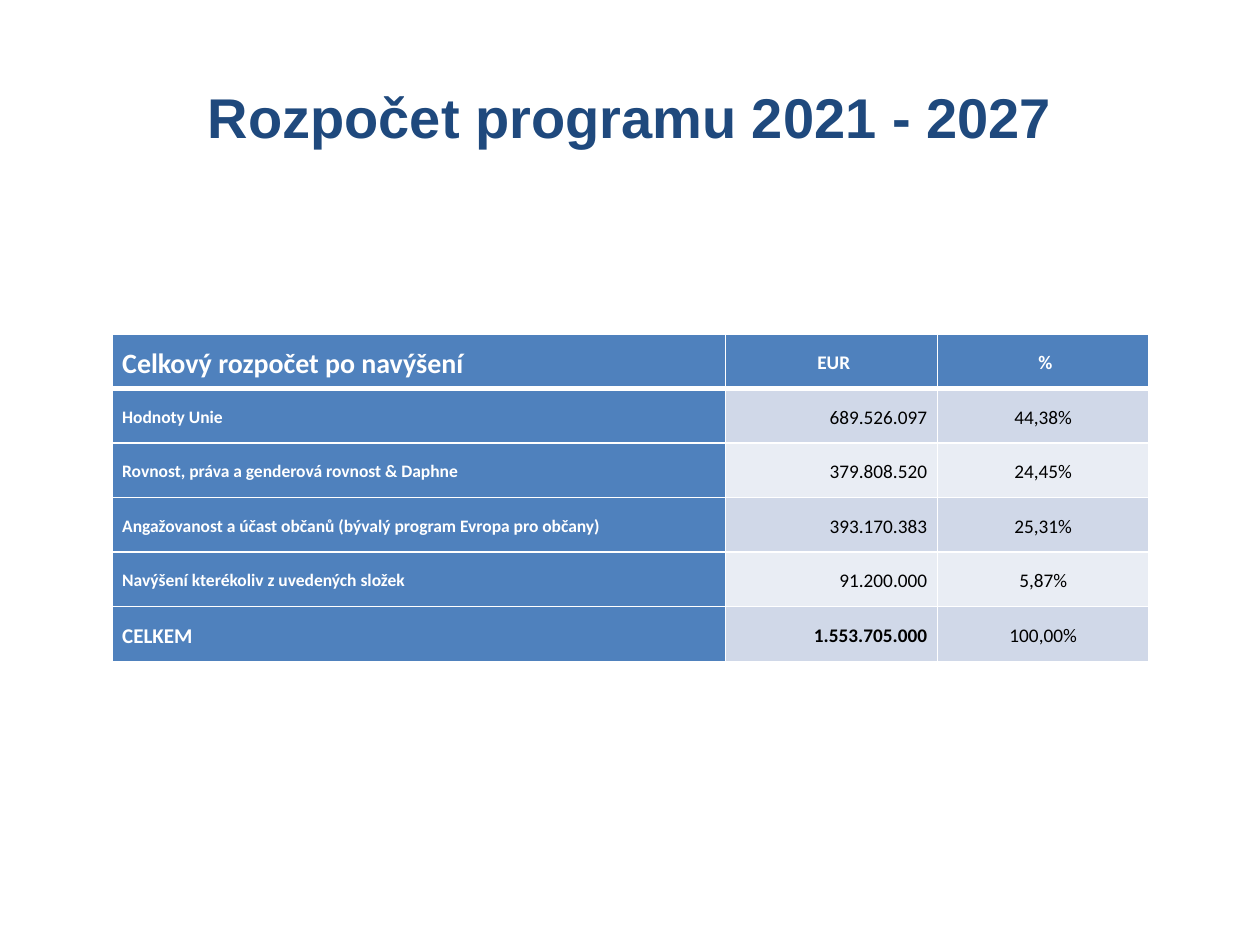
from lxml.etree import SubElement
from pptx import Presentation
from pptx.dml.color import RGBColor
from pptx.enum.text import MSO_ANCHOR, PP_ALIGN
from pptx.oxml.ns import qn
from pptx.util import Inches, Pt

NAVY = RGBColor(0x1F, 0x49, 0x7D)
BLUE = RGBColor(0x4F, 0x81, 0xBD)
BAND_DARK = RGBColor(0xD0, 0xD8, 0xE8)
BAND_LIGHT = RGBColor(0xE9, 0xED, 0xF4)
WHITE = RGBColor(0xFF, 0xFF, 0xFF)
BLACK = RGBColor(0x00, 0x00, 0x00)

COLUMN_WIDTHS = (4.87, 1.68, 1.68)
HEADER = ("Celkový rozpočet po navýšení", " EUR", " %")
BUDGET = (
    ("Hodnoty Unie", "689.526.097", "44,38%"),
    ("Rovnost, práva a genderová rovnost & Daphne", "379.808.520", "24,45%"),
    ("Angažovanost a účast občanů (bývalý program Evropa pro občany)", "393.170.383", "25,31%"),
    ("Navýšení kterékoliv z uvedených složek", "91.200.000", "5,87%"),
    ("CELKEM", "1.553.705.000", "100,00%"),
)


class BudgetSlide:
    """Holds the slide and draws its title and budget table in one style."""

    def __init__(self, deck):
        self.slide = deck.slides.add_slide(deck.slide_layouts[5])
        self.cell_format = {
            "margin_left": Inches(0.08),
            "margin_right": Inches(0.08),
            "margin_top": 0,
            "margin_bottom": 0,
            "vertical_anchor": MSO_ANCHOR.MIDDLE,
        }
        self.paragraph_format = {"line_spacing": 1.15, "space_after": Pt(10)}

    def apply(self, target, values):
        for name, value in values.items():
            setattr(target, name, value)

    def add_text(self, para, text, color, size, bold, font="Calibri"):
        span = para.add_run()
        span.text = text
        self.apply(span.font, {"name": font, "size": Pt(size), "bold": bold})
        span.font.color.rgb = color

    def title(self, text):
        box = self.slide.shapes.title
        self.apply(box, {"left": Inches(0.5), "top": Inches(0.3),
                         "width": Inches(9), "height": Inches(1.25)})
        box.text_frame.vertical_anchor = MSO_ANCHOR.MIDDLE
        para = box.text_frame.paragraphs[0]
        para.alignment = PP_ALIGN.CENTER
        self.add_text(para, text, NAVY, 32, True, "Arial")

    def border(self, cell, bottom, top):
        properties = cell._tc.get_or_add_tcPr()
        for side, width in {"L": 1, "R": 1, "T": top, "B": bottom}.items():
            line = SubElement(properties, qn(f"a:ln{side}"), w=str(Pt(width)))
            fill = SubElement(line, qn("a:solidFill"))
            SubElement(fill, qn("a:srgbClr"), val=str(WHITE))

    def cell(self, cell, text, fill, align, **style):
        self.apply(cell, self.cell_format)
        cell.fill.solid()
        cell.fill.fore_color.rgb = fill
        para = cell.text_frame.paragraphs[0]
        self.apply(para, {**self.paragraph_format, "alignment": align})
        self.add_text(para, text, **style)

    def table(self, header, rows):
        count = len(rows) + 1
        frame = self.slide.shapes.add_table(
            count, len(header), Inches(0.89), Inches(2.65), Inches(8.23), Inches(2.6))
        table = frame.table
        table.first_col = True
        for column, width in zip(table.columns, COLUMN_WIDTHS):
            column.width = Inches(width)
        for number, texts in enumerate((header, *rows)):
            band = BAND_DARK if number % 2 else BAND_LIGHT
            is_header, is_total = number == 0, number == count - 1
            label_size = 16 if is_header else 12 if is_total else 10
            for index, text in enumerate(texts):
                cell = table.cell(number, index)
                is_label = index == 0
                strong = is_header or is_label
                align = (PP_ALIGN.LEFT if is_label else
                         PP_ALIGN.RIGHT if index == 1 and not is_header else PP_ALIGN.CENTER)
                self.border(cell, 3 if is_header else 1, 3 if number == 1 else 1)
                self.cell(cell, text, BLUE if strong else band, align,
                          color=WHITE if strong else BLACK,
                          size=label_size if is_label else 11,
                          bold=strong or (is_total and index == 1))


def main():
    deck = Presentation()
    deck.slide_width, deck.slide_height = Inches(10), Inches(7.5)
    page = BudgetSlide(deck)
    page.title("Rozpočet programu 2021 - 2027")
    page.table(HEADER, BUDGET)
    deck.save("out.pptx")


if __name__ == "__main__":
    main()
